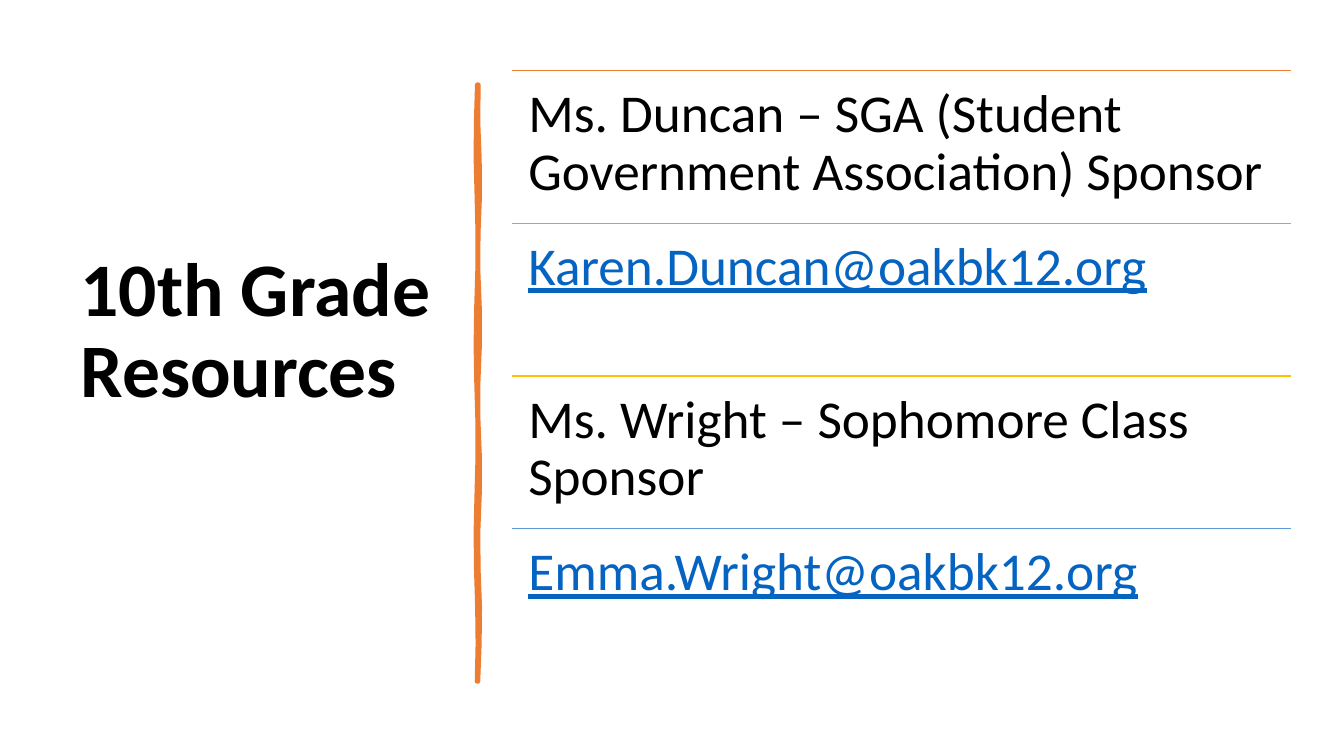
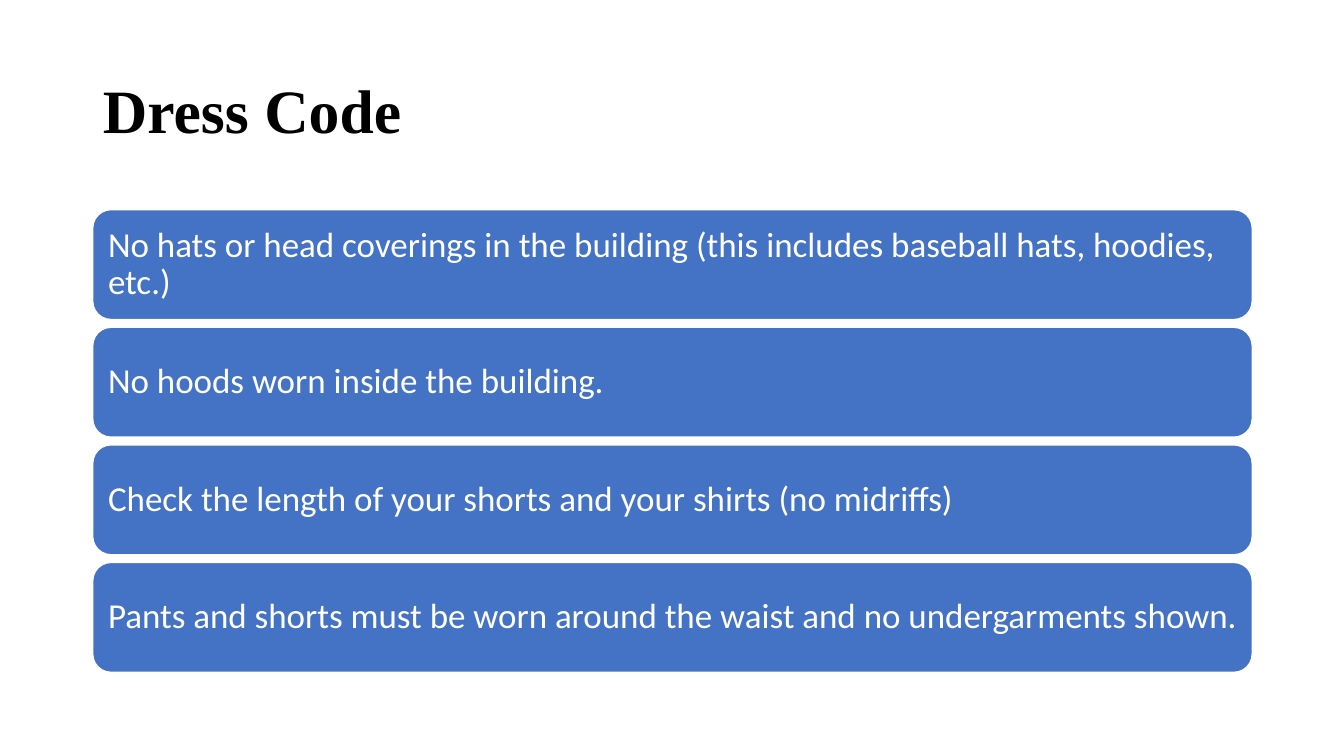
from math import sin

from lxml.etree import SubElement
from pptx import Presentation
from pptx.dml.color import RGBColor
from pptx.enum.shapes import MSO_CONNECTOR, MSO_SHAPE
from pptx.enum.text import MSO_ANCHOR, MSO_AUTO_SIZE, PP_ALIGN
from pptx.oxml.ns import qn
from pptx.util import Emu, Pt

EMU_PER_PX = 9144
TITLE_ONLY = 5
COLORS = {
    "black": "000000",
    "white": "FFFFFF",
    "orange": "ED7D31",
    "gray": "A5A5A5",
    "gold": "FFC000",
    "sky": "5B9BD5",
    "blue": "4472C4",
    "link": "0563C1",
}
TITLE_FONT = {"size": Pt(54), "name": "Calibri", "bold": True}
SERIF_TITLE_FONT = {"size": Pt(44), "name": "Times New Roman", "bold": True}
CONTACT_FONT = {"size": Pt(38), "name": "Calibri"}
LINK_FONT = {**CONTACT_FONT, "underline": True}
RULE_FONT = {"size": Pt(25), "name": "Calibri"}

CONTACTS = [
    ("Ms. Duncan – SGA (Student Government Association) Sponsor", "orange", "black", CONTACT_FONT),
    ("Karen.Duncan@oakbk12.org", "gray", "link", LINK_FONT),
    ("Ms. Wright – Sophomore Class Sponsor", "gold", "black", CONTACT_FONT),
    ("Emma.Wright@oakbk12.org", "sky", "link", LINK_FONT),
]
DRESS_RULES = [
    "No hats or head coverings in the building (this includes baseball hats, hoodies, etc.)",
    "No hoods worn inside the building.",
    "Check the length of your shorts and your shirts (no midriffs)",
    "Pants and shorts must be worn around the waist and no undergarments shown.",
]


def px(value):
    return Emu(round(value * EMU_PER_PX))


def color(name):
    return RGBColor.from_string(COLORS[name])


def set_attributes(target, values):
    for name, value in values.items():
        setattr(target, name, value)


def style_line(line, color_name, width):
    line.color.rgb = color(color_name)
    line.width = Pt(width)


def write_text(shape, text, font, color_name, anchor, inset=None):
    """Fill a shape with one left-aligned paragraph; inset is in px."""
    frame = shape.text_frame
    set_attributes(frame, {
        "text": text,
        "word_wrap": True,
        "auto_size": MSO_AUTO_SIZE.NONE,
        "vertical_anchor": anchor,
    })
    if inset is not None:
        sides = ("left", "top", "right", "bottom")
        set_attributes(frame, {f"margin_{side}": px(inset) for side in sides})
    paragraph = frame.paragraphs[0]
    set_attributes(paragraph, {"alignment": PP_ALIGN.LEFT, "line_spacing": 0.9})
    run_font = paragraph.runs[0].font
    set_attributes(run_font, font)
    run_font.color.rgb = color(color_name)


def add_titled_slide(presentation, text, font, left, top, width, height):
    slide = presentation.slides.add_slide(presentation.slide_layouts[TITLE_ONLY])
    title = slide.shapes.title
    set_attributes(title, {
        "left": px(left), "top": px(top), "width": px(width), "height": px(height),
    })
    write_text(title, text, font, "black", MSO_ANCHOR.MIDDLE)
    return slide


def add_brush_stroke(slide, x, top, bottom, step):
    """Draw a slightly wavering vertical stroke."""
    heights = range(top, bottom + 1, step)
    right = [(px(x + 1 + sin(y / 23)), px(y)) for y in heights]
    left = [(px(x - 1 + sin(y / 31)), px(y)) for y in reversed(heights)]
    builder = slide.shapes.build_freeform(*right[0])
    builder.add_line_segments(right[1:] + left, close=True)
    stroke = builder.convert_to_shape()
    stroke.shadow.inherit = False
    stroke.fill.solid()
    stroke.fill.fore_color.rgb = color("orange")
    style_line(stroke.line, "orange", 3.25)
    SubElement(stroke.line._get_or_add_ln(), qn("a:round"))


def add_divider(slide, left, right, y, color_name):
    divider = slide.shapes.add_connector(
        MSO_CONNECTOR.STRAIGHT, px(left), px(y), px(right), px(y))
    style_line(divider.line, color_name, 1)
    SubElement(divider._element.spPr, qn("a:effectLst"))


def add_contacts(slide, left, top, width, height):
    row_height = height / len(CONTACTS)
    for index, (text, line_color, text_color, font) in enumerate(CONTACTS):
        row_top = top + index * row_height
        add_divider(slide, left, left + width, row_top, line_color)
        box = slide.shapes.add_textbox(
            px(left), px(row_top), px(width), px(row_height))
        write_text(box, text, font, text_color, MSO_ANCHOR.TOP, inset=16)


def add_rule_cards(slide, left, top, width, height, last_top):
    pitch = (last_top - top) / (len(DRESS_RULES) - 1)
    for index, text in enumerate(DRESS_RULES):
        card = slide.shapes.add_shape(
            MSO_SHAPE.ROUNDED_RECTANGLE,
            px(left), px(top + index * pitch), px(width), px(height))
        card.shadow.inherit = False
        card.fill.solid()
        card.fill.fore_color.rgb = color("blue")
        style_line(card.line, "white", 1)
        write_text(card, text, RULE_FONT, "white", MSO_ANCHOR.MIDDLE, inset=10)


def main():
    presentation = Presentation()
    set_attributes(presentation, {"slide_width": px(1333), "slide_height": px(750)})

    resources = add_titled_slide(
        presentation, "10th Grade Resources", TITLE_FONT, 70, 70, 374, 520)
    add_brush_stroke(resources, x=474, top=84, bottom=676, step=37)
    add_contacts(resources, left=508, top=70, width=772, height=606)

    dress_code = add_titled_slide(
        presentation, "Dress Code", SERIF_TITLE_FONT, 92, 40, 1150, 145)
    add_rule_cards(dress_code, left=92, top=208, width=1150, height=109, last_top=558)

    presentation.save("out.pptx")


if __name__ == "__main__":
    main()
